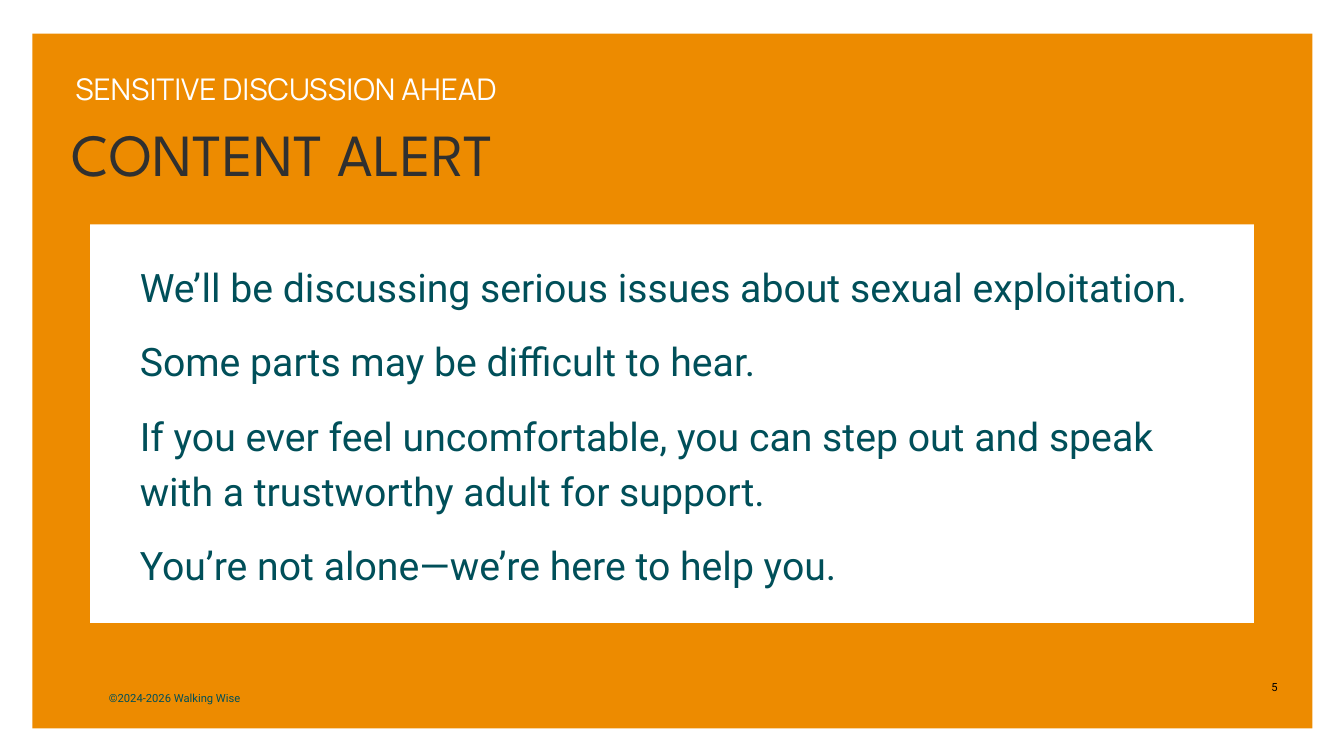
from lxml import etree
from pptx import Presentation
from pptx.dml.color import RGBColor
from pptx.enum.shapes import MSO_SHAPE
from pptx.enum.text import MSO_ANCHOR, MSO_AUTO_SIZE, PP_ALIGN
from pptx.oxml.ns import qn
from pptx.util import Inches, Pt

COLORS = {
    "orange": "ED8B00",
    "white": "FFFFFF",
    "charcoal": "303030",
    "teal": "004F59",
    "black": "000000",
}
LINE_HEIGHT = 1.4


def place(shape, left, top, width, height):
    shape.left, shape.top = Inches(left), Inches(top)
    shape.width, shape.height = Inches(width), Inches(height)


def write(shape, lines, font_name, size, color, align=PP_ALIGN.LEFT, gap=0):
    frame = shape.text_frame
    frame.word_wrap = True
    frame.auto_size = MSO_AUTO_SIZE.NONE
    frame.vertical_anchor = MSO_ANCHOR.TOP
    frame.margin_left = frame.margin_right = 0
    frame.margin_top = frame.margin_bottom = 0
    for index, line in enumerate(lines):
        paragraph = frame.paragraphs[0] if index == 0 else frame.add_paragraph()
        paragraph.alignment = align
        paragraph.line_spacing = Pt(size * LINE_HEIGHT)
        paragraph.space_before = Pt(gap if index else 0)
        paragraph.space_after = Pt(0)
        properties = paragraph._p.get_or_add_pPr()
        properties.set("marL", "0")
        properties.set("indent", "0")
        etree.SubElement(properties, qn("a:buNone"))
        run = paragraph.add_run()
        run.text = line
        run.font.name = font_name
        run.font.size = Pt(size)
        run.font.color.rgb = RGBColor.from_string(COLORS[color])


presentation = Presentation()
presentation.slide_width = Inches(20)
presentation.slide_height = Inches(11.25)
slide = presentation.slides.add_slide(presentation.slide_layouts[1])
title, body = slide.placeholders

# Orange backdrop and white message panel
for color, box in [
    ("orange", (0.48, 0.5, 19.05, 10.34)),
    ("white", (1.34, 3.34, 17.32, 5.93)),
]:
    panel = slide.shapes.add_shape(MSO_SHAPE.RECTANGLE, *map(Inches, box))
    panel.shadow.inherit = False
    panel.fill.solid()
    panel.fill.fore_color.rgb = RGBColor.from_string(COLORS[color])
    panel.line.fill.background()

# Bring the placeholders in front of the panels
for placeholder in (title, body):
    slide.shapes._spTree.append(placeholder._element)

# Title
place(title, 1.07, 1.56, 10, 1.2)
write(title, ["CONTENT ALERT"], "League Spartan", 64, "charcoal")

# Message
place(body, 2.08, 3.8, 16.3, 4.91)
messages = [
    "We’ll be discussing serious issues about sexual exploitation.",
    "Some parts may be difficult to hear.",
    "If you ever feel uncomfortable, you can step out and speak "
    "with a trustworthy adult for support.",
    "You’re not alone—we’re here to help you.",
]
write(body, messages, "Roboto", 42, "teal", gap=21)

# Kicker, page number and copyright line
for text, box, font_name, size, color, align in [
    ("SENSITIVE DISCUSSION AHEAD", (1.12, 0.97, 15.91, 0.6),
     "Manrope", 32, "white", PP_ALIGN.LEFT),
    ("5", (18.88, 10.09, 0.17, 0.2), "Roboto", 12, "black", PP_ALIGN.CENTER),
    ("©2024-2026 Walking Wise", (1.62, 10.25, 2.58, 0.23),
     "Roboto", 12, "teal", PP_ALIGN.LEFT),
]:
    label = slide.shapes.add_textbox(*map(Inches, box))
    write(label, [text], font_name, size, color, align)

presentation.save("out.pptx")
